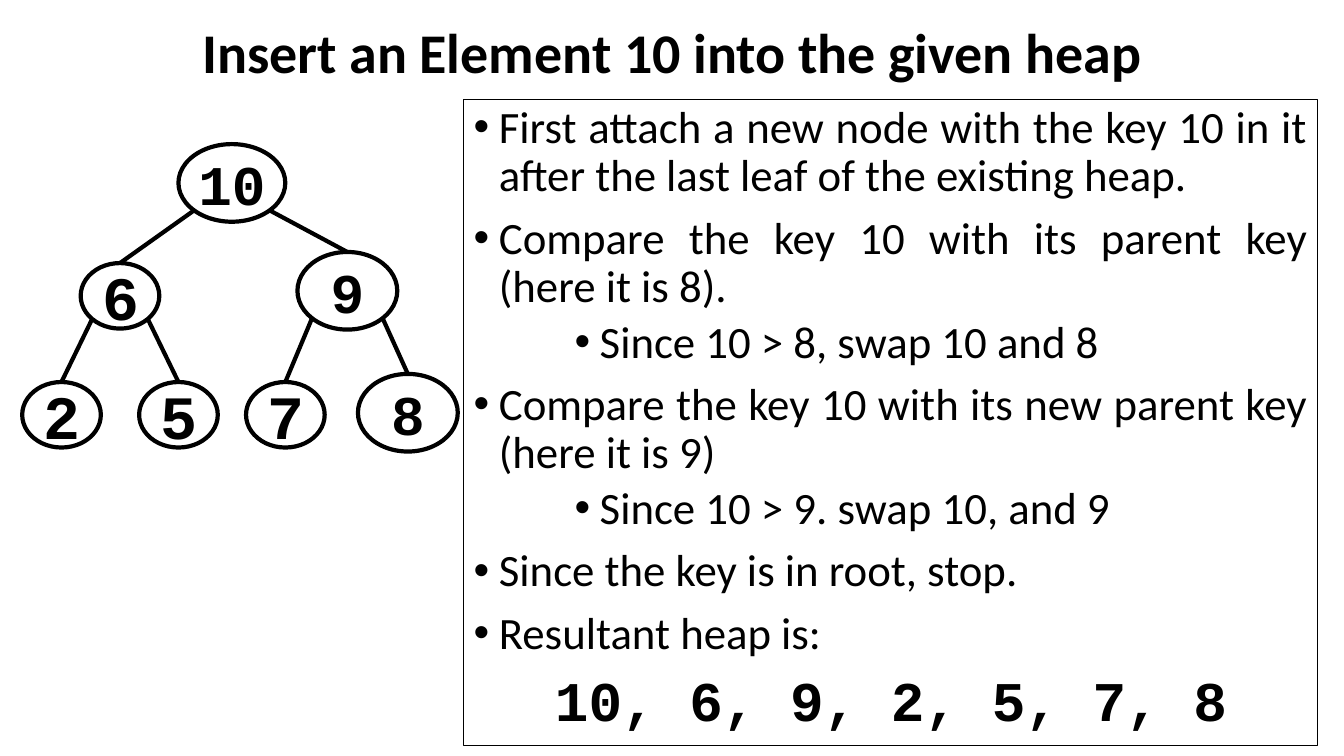
from dataclasses import dataclass
from math import sqrt

from lxml import etree
from pptx import Presentation
from pptx.dml.color import RGBColor
from pptx.enum.shapes import MSO_CONNECTOR as Connector, MSO_SHAPE as Preset
from pptx.enum.text import MSO_ANCHOR as Anchor, MSO_AUTO_SIZE as AutoSize, PP_ALIGN as Align
from pptx.oxml.ns import qn
from pptx.util import Inches, Pt

BLACK = "000000"
BODY_FONT = "Calibri"
KEY_FONT = "Courier New"


@dataclass(frozen=True)
class Node:
    key: str
    left: float
    top: float
    width: float = 0.78
    height: float = 0.65
    size: int = 44
    inset: float = 0.1


@dataclass(frozen=True)
class Step:
    text: str
    level: int = 0


# Heap in level order: the children of node i are 2i + 1 and 2i + 2
HEAP = [
    Node("10", 1.77, 1.43, 1.06, 0.77, 40, 0),
    Node("6", 0.8, 2.61),
    Node("9", 2.95, 2.5, 0.99, 0.77, 40, 0),
    Node("2", 0.22, 3.79),
    Node("5", 1.38, 3.79),
    Node("7", 2.44, 3.79),
    Node("8", 3.55, 3.71, 0.99, 0.77, 40, 0),
]

STEPS = [
    Step("First attach a new node with the key 10 in it after the last leaf of the existing heap."),
    Step("Compare the key 10 with its parent key (here it is 8)."),
    Step("Since 10 > 8, swap 10 and 8", 2),
    Step("Compare the key 10 with its new parent key (here it is 9)"),
    Step("Since 10 > 9. swap 10, and 9", 2),
    Step("Since the key is in root, stop."),
    Step("Resultant heap is:"),
]


def colour(value: str) -> RGBColor:
    return RGBColor.from_string(value)


def add_run(paragraph, text: str, size: int, font: str, bold: bool = False) -> None:
    run = paragraph.add_run()
    run.text = text
    run.font.size = Pt(size)
    run.font.name = font
    run.font.bold = bold
    run.font.color.rgb = colour(BLACK)


def set_line(shape, width: float) -> None:
    shape.line.color.rgb = colour(BLACK)
    shape.line.width = Pt(width)


def set_bullet(paragraph, indent: float) -> None:
    properties = paragraph._p.get_or_add_pPr()
    properties.set("marL", str(Inches(indent)))
    properties.set("indent", str(Inches(-0.25)))
    etree.SubElement(properties, qn("a:buFont")).set("typeface", "Arial")
    etree.SubElement(properties, qn("a:buChar")).set("char", "•")


def add_title(slide, text: str) -> None:
    title = slide.shapes.title
    title.left, title.top = Inches(0), Inches(0.1)
    title.width, title.height = Inches(13.33), Inches(0.89)
    frame = title.text_frame
    frame.vertical_anchor = Anchor.MIDDLE
    frame.auto_size = AutoSize.NONE
    paragraph = frame.paragraphs[0]
    paragraph.alignment = Align.CENTER
    paragraph.line_spacing = 0.9
    add_run(paragraph, text, 40, BODY_FONT, True)


def add_steps(slide, steps: list[Step], result: str) -> None:
    box = slide.shapes.add_textbox(Inches(4.6), Inches(0.99), Inches(8.47), Inches(6.41))
    set_line(box, 0.75)
    frame = box.text_frame
    frame.word_wrap = True
    for index, step in enumerate(steps):
        paragraph = frame.add_paragraph() if index else frame.paragraphs[0]
        paragraph.alignment = Align.JUSTIFY
        paragraph.level = step.level
        paragraph.line_spacing = 0.9
        if index:
            paragraph.space_before = Pt(5 if step.level else 10)
        set_bullet(paragraph, 0.25 + step.level / 2)
        add_run(paragraph, step.text, 32, BODY_FONT)
    paragraph = frame.add_paragraph()
    paragraph.alignment = Align.CENTER
    paragraph.line_spacing = 0.9
    paragraph.space_before = Pt(10)
    add_run(paragraph, result, 40, KEY_FONT, True)


def add_node(slide, node: Node):
    oval = slide.shapes.add_shape(Preset.OVAL, Inches(node.left), Inches(node.top),
                                  Inches(node.width), Inches(node.height))
    oval.shadow.inherit = False
    oval.fill.background()
    set_line(oval, 3)
    frame = oval.text_frame
    frame.vertical_anchor = Anchor.MIDDLE
    frame.margin_left = frame.margin_right = Inches(node.inset)
    paragraph = frame.paragraphs[0]
    paragraph.alignment = Align.CENTER
    add_run(paragraph, node.key, node.size, KEY_FONT, True)
    return oval


def add_edge(slide, parent: Node, child: Node, child_oval, side: int) -> None:
    # Start on the parent's lower diagonal: side is -1 for left, 1 for right
    start_x = parent.left + parent.width / 2 * (1 + side / sqrt(2))
    start_y = parent.top + parent.height / 2 * (1 + 1 / sqrt(2))
    edge = slide.shapes.add_connector(Connector.STRAIGHT, Inches(start_x), Inches(start_y),
                                      Inches(child.left + child.width / 2), Inches(child.top))
    edge.end_connect(child_oval, 0)
    set_line(edge, 3)
    etree.SubElement(edge._element.spPr, qn("a:effectLst"))


def main() -> None:
    presentation = Presentation()
    presentation.slide_width = Inches(13.33)
    presentation.slide_height = Inches(7.5)
    slide = presentation.slides.add_slide(presentation.slide_layouts[5])

    # Title and explanation
    add_title(slide, "Insert an Element 10 into the given heap")
    add_steps(slide, STEPS, ", ".join(node.key for node in HEAP))

    # Heap tree
    ovals = [add_node(slide, node) for node in HEAP]
    for index in range(1, len(HEAP)):
        side = -1 if index % 2 else 1
        add_edge(slide, HEAP[(index - 1) // 2], HEAP[index], ovals[index], side)

    presentation.save("out.pptx")


if __name__ == "__main__":
    main()
